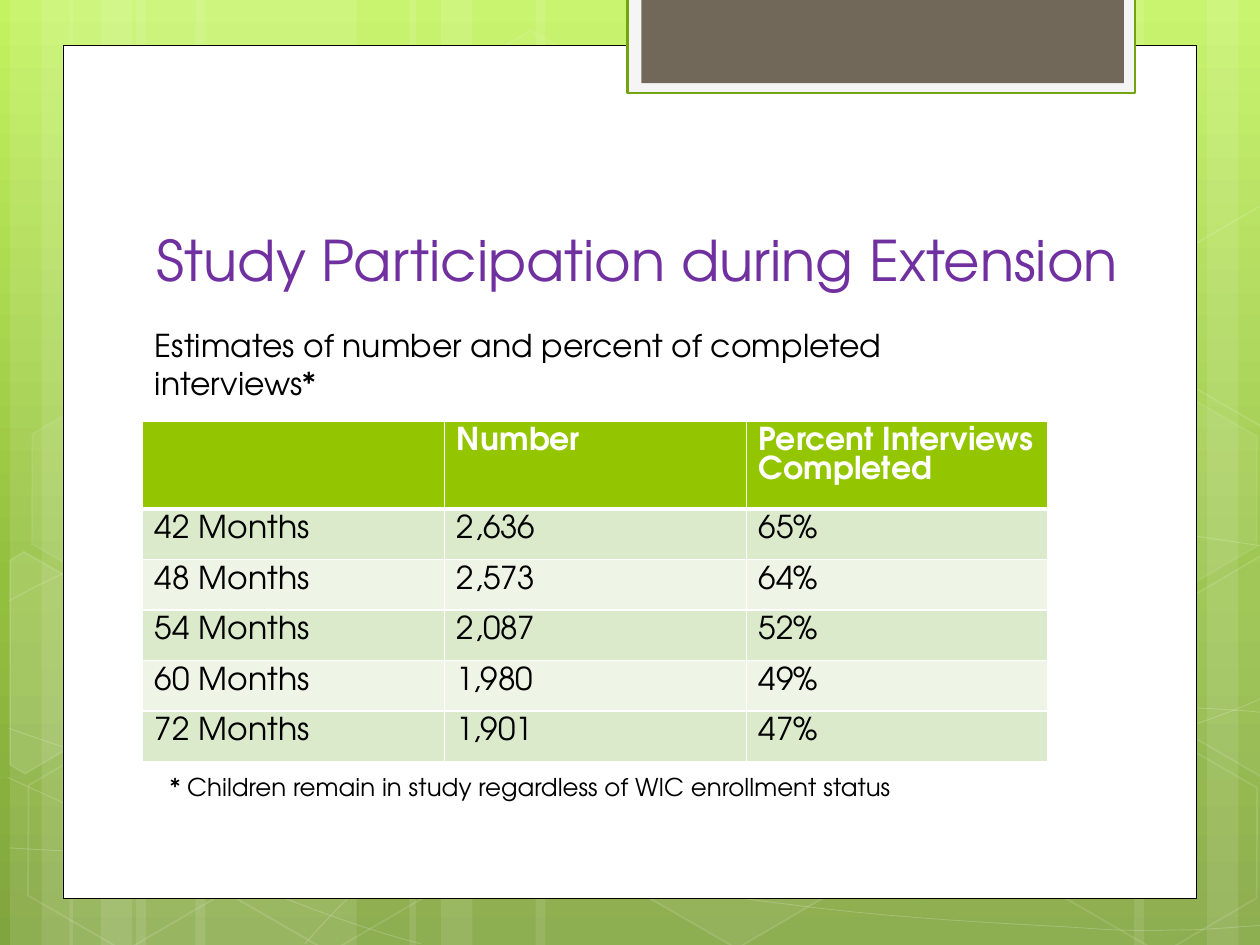
from dataclasses import dataclass

from lxml import etree
from pptx import Presentation
from pptx.dml.color import RGBColor
from pptx.enum.shapes import MSO_SHAPE
from pptx.enum.text import MSO_ANCHOR
from pptx.oxml import parse_xml
from pptx.oxml.ns import nsdecls, qn
from pptx.util import Inches, Pt

RECTANGLE, HEXAGON = MSO_SHAPE.RECTANGLE, MSO_SHAPE.HEXAGON
TOP, BOTTOM = MSO_ANCHOR.TOP, MSO_ANCHOR.BOTTOM


@dataclass(frozen=True)
class Theme:
    font: str = "TeX Gyre Adventor"
    title: str = "7030A0"
    ink: str = "000000"
    white: str = "FFFFFF"
    header: str = "94C600"
    bands: tuple = ("DCEACC", "EEF5E7")
    tab: str = "71685A"
    tab_frame: str = "F5F5F5"
    tab_line: str = "74A510"
    backdrop: tuple = ((0, "C3F35F"), (62, "93BF3F"), (100, "81A53E"))
    title_size: int = 32
    body_size: int = 18
    note_size: int = 14


THEME = Theme()

TITLE = "Study Participation during Extension"
SUBTITLE = "Estimates of number and percent of completed interviews*"
FOOTNOTE = "* Children remain in study regardless of WIC enrollment status"
PARTICIPATION = [
    ("", "Number", "Percent Interviews Completed"),
    ("42 Months", "2,636", "65%"),
    ("48 Months", "2,573", "64%"),
    ("54 Months", "2,087", "52%"),
    ("60 Months", "1,980", "49%"),
    ("72 Months", "1,901", "47%"),
]

STRIPES = [(1.08, 1.75), (0.08, 0.5), (0.33, 0.83), (1.55, 1.75), (0.55, 0.5), (0.8, 0.83),
           (7.33, 1.75), (9.58, 0.5), (9, 0.83), (4.25, 3.08), (3.25, 0.5), (3.5, 0.83)]
CURVES = [
    [(0.07, 6.73), (0.61, 6.76), (1.15, 6.79), (1.9, 6.78), (2.65, 6.77), (3.58, 6.75), (4.58, 6.65),
     (5.58, 6.55), (7, 6.36), (7.92, 6.17), (8.83, 5.98), (9.77, 5.68), (10.07, 5.51)],
    [(0.07, 4.77), (0.36, 4.61), (0.65, 4.46), (1.21, 4.31), (1.78, 4.16), (2.59, 3.94), (3.47, 3.87),
     (4.36, 3.8), (5.44, 3.79), (6.54, 3.87), (7.64, 3.95), (9.47, 4.26), (10.07, 4.34)],
    [(0.06, 6.17), (1.27, 6.72), (2.47, 7.27), (3.34, 7.49)],
    [(0.07, 5.78), (0.38, 5.89), (0.7, 6), (1.28, 6.16), (1.86, 6.31), (2.73, 6.56), (3.57, 6.73),
     (4.4, 6.9), (5.45, 7.08), (6.28, 7.18), (7.11, 7.29), (8, 7.33), (8.53, 7.36),
     (9.05, 7.4), (9.19, 7.38), (9.45, 7.38), (9.71, 7.37), (9.89, 7.35), (10.07, 7.34)],
    [(2.42, 7.49), (2.6, 7.29), (2.78, 7.09), (3.02, 6.91), (3.26, 6.73), (3.6, 6.53), (3.88, 6.39),
     (4.16, 6.25), (4.33, 6.19), (4.7, 6.09), (5.06, 5.99), (5.73, 5.85), (6.08, 5.78),
     (6.44, 5.71), (6.49, 5.71), (6.8, 5.69), (7.11, 5.66), (7.6, 5.63), (7.94, 5.62),
     (8.29, 5.61), (8.86, 5.62), (8.86, 5.62), (8.86, 5.62), (9.53, 5.62), (9.53, 5.62),
     (9.71, 5.63), (9.88, 5.64), (9.97, 5.65), (10.06, 5.66), (10.03, 5.65), (10.06, 5.66)],
]
HEXAGONS = [(3.34, 0.36, 4, 8), (4.97, 5.89, 6, 12), (0.11, 5.91, None, 12), (0.14, 3.12, 7, 8),
            (1.74, 5.92, None, 12), (7.53, 4.53, 10, 12), (8.34, 5.93, None, 12), (8.34, 3.14, 7, 8)]
CUT_HEXAGONS = [
    ([(0.08, 4.45), (0.19, 4.38), (0.96, 4.82), (0.95, 5.7), (0.2, 6.14), (0.08, 6.07)], 10),
    ([(9.26, 4.85), (10.01, 4.41), (10.09, 4.46), (10.09, 6.13), (10.02, 6.17), (9.26, 5.73)], 4),
    ([(9.26, 2.07), (10.01, 1.63), (10.1, 1.68), (10.09, 3.35), (10.02, 3.39), (9.26, 2.95)], None),
]


def paint(fill, color, alpha=None):
    fill.solid()
    fill.fore_color.rgb = RGBColor.from_string(color)
    if alpha is not None:
        color_element = fill._xPr.find(qn("a:solidFill"))[0]
        etree.SubElement(color_element, qn("a:alpha"), val=str(alpha * 1000))


def dress(shape, fill=None, alpha=None, line=None, width=1, line_alpha=None):
    shape.shadow.inherit = False
    if fill:
        paint(shape.fill, fill, alpha)
    else:
        shape.fill.background()
    if line:
        paint(shape.line.fill, line, line_alpha)
        shape.line.width = Pt(width)
    else:
        shape.line.fill.background()


def add_preset(slide, preset, box, **look):
    shape = slide.shapes.add_shape(preset, *map(Inches, box))
    dress(shape, **look)
    return shape


def add_outline(slide, points, close, **look):
    start, *rest = [(Inches(x), Inches(y)) for x, y in points]
    builder = slide.shapes.build_freeform(*start)
    builder.add_line_segments(rest, close=close)
    outline = builder.convert_to_shape()
    dress(outline, **look)
    return outline


def bend(outline):
    lines = list(outline.element.iter(qn("a:lnTo")))
    track = lines[0].getparent()
    for first in range(0, len(lines), 3):
        curve = etree.SubElement(track, qn("a:cubicBezTo"))
        for line in lines[first:first + 3]:
            curve.append(line[0])
            track.remove(line)


def format_text(frame, size, color, bold=False):
    for run in frame.paragraphs[0].runs:
        run.font.name = THEME.font
        run.font.size = Pt(size)
        run.font.bold = bold
        run.font.color.rgb = RGBColor.from_string(color)


def add_text(slide, text, box, size, color, anchor=TOP):
    frame = slide.shapes.add_textbox(*map(Inches, box)).text_frame
    frame.word_wrap = True
    frame.vertical_anchor = anchor
    frame.text = text
    format_text(frame, size, color)


def set_borders(cell, top, bottom):
    widths = {"lnL": 1, "lnR": 1, "lnT": top, "lnB": bottom}
    for position, (side, width) in enumerate(widths.items()):
        cell._tc.get_or_add_tcPr().insert(position, parse_xml(
            f'<a:{side} {nsdecls("a")} w="{Pt(width)}"><a:solidFill>'
            f'<a:srgbClr val="{THEME.white}"/></a:solidFill></a:{side}>'))


def add_backdrop(slide):
    stops = "".join(f'<a:gs pos="{position * 1000}"><a:srgbClr val="{color}"/></a:gs>'
                    for position, color in THEME.backdrop)
    slide.element.cSld.insert(0, parse_xml(
        f'<p:bg {nsdecls("p", "a")}><p:bgPr><a:gradFill><a:gsLst>{stops}</a:gsLst>'
        '<a:lin ang="5400000" scaled="0"/></a:gradFill><a:effectLst/></p:bgPr></p:bg>'))
    for left, width in STRIPES:
        add_preset(slide, RECTANGLE, (left, 0, width, 7.5), fill=THEME.white, alpha=10)
    for controls in CURVES:
        bend(add_outline(slide, controls, False, line=THEME.white, width=0.5, line_alpha=20))
    for left, top, alpha, line_alpha in HEXAGONS:
        hexagon = add_preset(slide, HEXAGON, (left, top, 1.75, 1.52), fill=alpha and THEME.white,
                             alpha=alpha, line=THEME.white, line_alpha=line_alpha)
        hexagon.adjustments[0], hexagon.adjustments[1] = 0.285, 1.155
        hexagon.rotation = 30
    for corners, alpha in CUT_HEXAGONS:
        add_outline(slide, corners, True, fill=alpha and THEME.white, alpha=alpha,
                    line=THEME.white, line_alpha=12)
    add_preset(slide, RECTANGLE, (0.5, 0.36, 9, 6.77), fill=THEME.white, line=THEME.ink, width=0.5)
    add_preset(slide, RECTANGLE, (4.98, -0.02, 4.03, 0.76), fill=THEME.tab_frame,
               line=THEME.tab_line, width=1.25)
    add_preset(slide, RECTANGLE, (5.09, -0.02, 3.83, 0.68), fill=THEME.tab)


def add_participation_table(slide):
    total_height, header_height = 2.33, 0.6
    body_height = (total_height - header_height) / (len(PARTICIPATION) - 1)
    table = slide.shapes.add_table(len(PARTICIPATION), len(PARTICIPATION[0]), Inches(1.13),
                                   Inches(3.34), Inches(7.19), Inches(total_height)).table
    for row, values in enumerate(PARTICIPATION):
        is_header = row == 0
        table.rows[row].height = Inches(header_height if is_header else body_height)
        for column, value in enumerate(values):
            cell = table.cell(row, column)
            if value:
                cell.text_frame.text = value
            format_text(cell.text_frame, THEME.body_size,
                        THEME.white if is_header else THEME.ink, is_header)
            paint(cell.fill, THEME.header if is_header else THEME.bands[(row - 1) % 2])
            set_borders(cell, top=3 if row == 1 else 1, bottom=3 if is_header else 1)


def main():
    deck = Presentation()
    deck.slide_width, deck.slide_height = Inches(10), Inches(7.5)
    slide = deck.slides.add_slide(deck.slide_layouts[6])
    add_backdrop(slide)
    add_text(slide, TITLE, (1.14, 1.12, 7.94, 1.25), THEME.title_size, THEME.title, BOTTOM)
    add_participation_table(slide)
    add_text(slide, SUBTITLE, (1.13, 2.54, 7.08, 0.71), THEME.body_size, THEME.ink)
    add_text(slide, FOOTNOTE, (1.25, 6.08, 6.42, 0.34), THEME.note_size, THEME.ink)
    deck.save("out.pptx")


if __name__ == "__main__":
    main()
